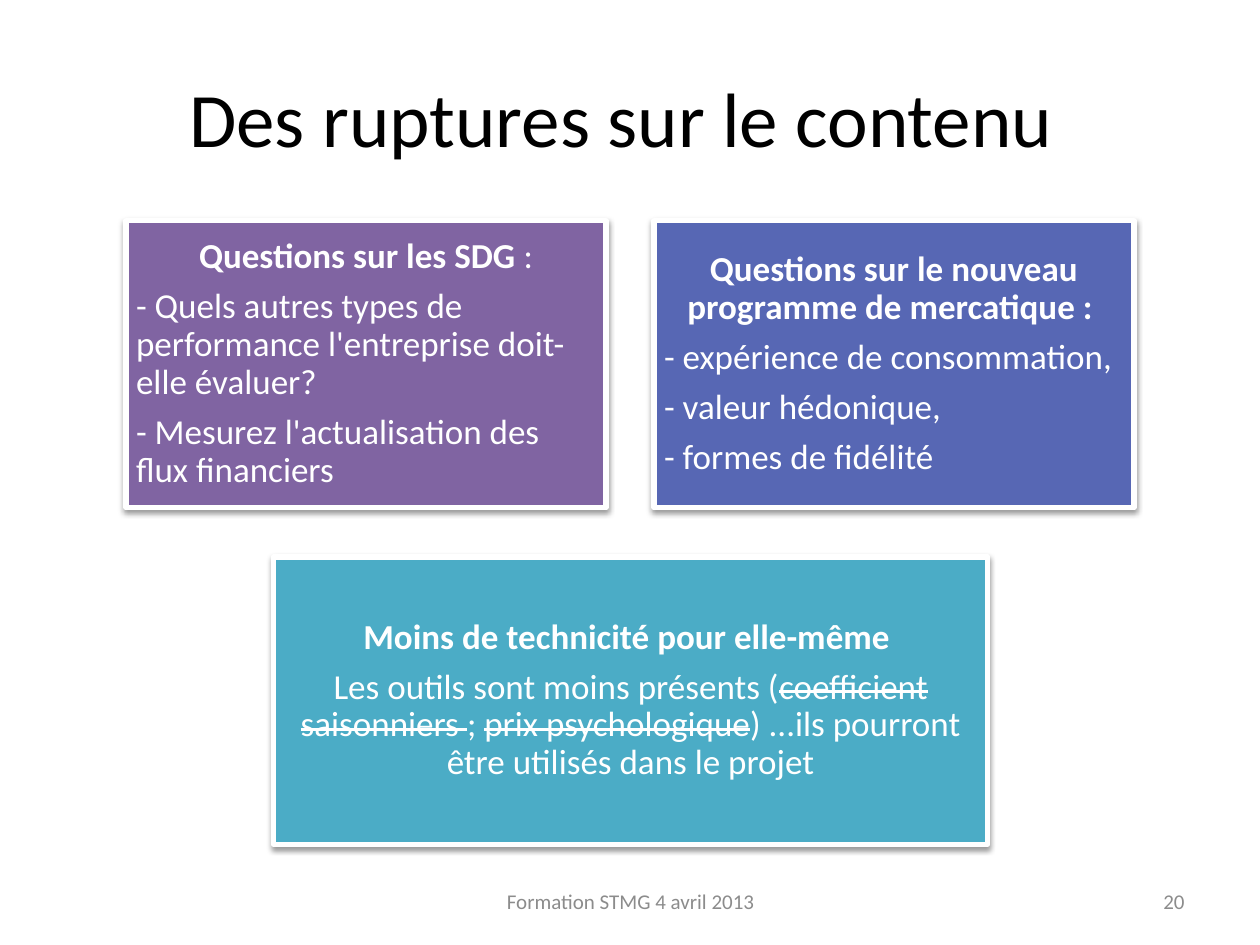
import pptx
import pptx.util
import pptx.dml.color
import pptx.enum.shapes
import pptx.enum.text
import pptx.oxml
from pptx.util import Inches

ALIGN = pptx.enum.text.PP_ALIGN
MIDDLE = pptx.enum.text.MSO_ANCHOR.MIDDLE
SHADOW = (
    '<a:effectLst xmlns:a="http://schemas.openxmlformats.org/drawingml/2006/main">'
    '<a:outerShdw blurRad="40000" dist="20000" dir="5400000" rotWithShape="0">'
    '<a:srgbClr val="000000"><a:alpha val="38000"/></a:srgbClr>'
    '</a:outerShdw></a:effectLst>'
)


def color(value):
    return pptx.dml.color.RGBColor.from_string(value)


def style(r, size, value, bold=False):
    r.font.name = "Calibri"
    r.font.size = pptx.util.Pt(size)
    r.font.bold = bold
    r.font.color.rgb = color(value)


prs = pptx.Presentation()
prs.slide_width, prs.slide_height = Inches(10), Inches(7.5)
s = prs.slides.add_slide(prs.slide_layouts[5])

# Title
title = s.shapes.title
title.left, title.top = Inches(0.5), Inches(0.3)
title.width, title.height = Inches(9), Inches(1.25)
tf = title.text_frame
tf.text = "Des ruptures sur le contenu "
tf.vertical_anchor = MIDDLE
tf.paragraphs[0].alignment = ALIGN.CENTER
style(tf.paragraphs[0].runs[0], 44, "000000")

# Boxes: left, top, width, fill, paragraphs of (alignment, runs);
# each run is its text and "b" for bold, "s" for struck through
C, L = ALIGN.CENTER, ALIGN.LEFT
boxes = [
    (1, 1.75, 3.81, "8064A2", [
        (C, [("Questions sur les SDG ", "b"), (":", "")]),
        (L, [("- Quels autres types de performance l'entreprise doit-elle évaluer?", "")]),
        (L, [("- Mesurez l'actualisation des flux financiers", "")]),
    ]),
    (5.19, 1.75, 3.81, "5767B4", [
        (C, [("Questions sur le nouveau programme de mercatique : ", "b")]),
        (L, [("- expérience de consommation,", "")]),
        (L, [("- valeur hédonique,", "")]),
        (L, [("- formes de fidélité", "")]),
    ]),
    (2.17, 4.42, 5.67, "4BACC6", [
        (C, [("Moins de technicité pour elle-même ", "b")]),
        (C, [("Les outils sont moins présents (", ""),
             ("coefficient saisonniers ", "s"), ("; ", ""),
             ("prix psychologique", "s"),
             (") ...ils pourront être utilisés dans le projet", "")]),
    ]),
]
for left, top, width, fill, paragraphs in boxes:
    sp = s.shapes.add_shape(pptx.enum.shapes.MSO_SHAPE.RECTANGLE,
                            Inches(left), Inches(top), Inches(width), Inches(2.28))
    sp.fill.solid()
    sp.fill.fore_color.rgb = color(fill)
    sp.line.color.rgb = color("FFFFFF")
    sp.line.width = pptx.util.Pt(3)
    sp._element.spPr.append(pptx.oxml.parse_xml(SHADOW))
    tf = sp.text_frame
    tf.word_wrap = True
    tf.vertical_anchor = MIDDLE
    tf.margin_left = tf.margin_right = tf.margin_top = tf.margin_bottom = Inches(0.08)
    for i, (align, runs) in enumerate(paragraphs):
        p = tf.add_paragraph() if i else tf.paragraphs[0]
        p.alignment = align
        p.line_spacing = 0.9
        p.space_after = pptx.util.Pt(7)
        for text, mark in runs:
            r = p.add_run()
            r.text = text
            style(r, 20, "FFFFFF", mark == "b")
            if mark == "s":
                r._r.get_or_add_rPr().set("strike", "sngStrike")

# Footer and slide number
for left, width, align, text in [(3.42, 3.17, ALIGN.CENTER, "Formation STMG 4 avril 2013"),
                                 (7.17, 2.33, ALIGN.RIGHT, "20")]:
    sp = s.shapes.add_textbox(Inches(left), Inches(6.95), Inches(width), Inches(0.4))
    tf = sp.text_frame
    tf.text = text
    tf.word_wrap = True
    tf.vertical_anchor = MIDDLE
    tf.paragraphs[0].alignment = align
    style(tf.paragraphs[0].runs[0], 12, "8C8C8C")

prs.save("out.pptx")
